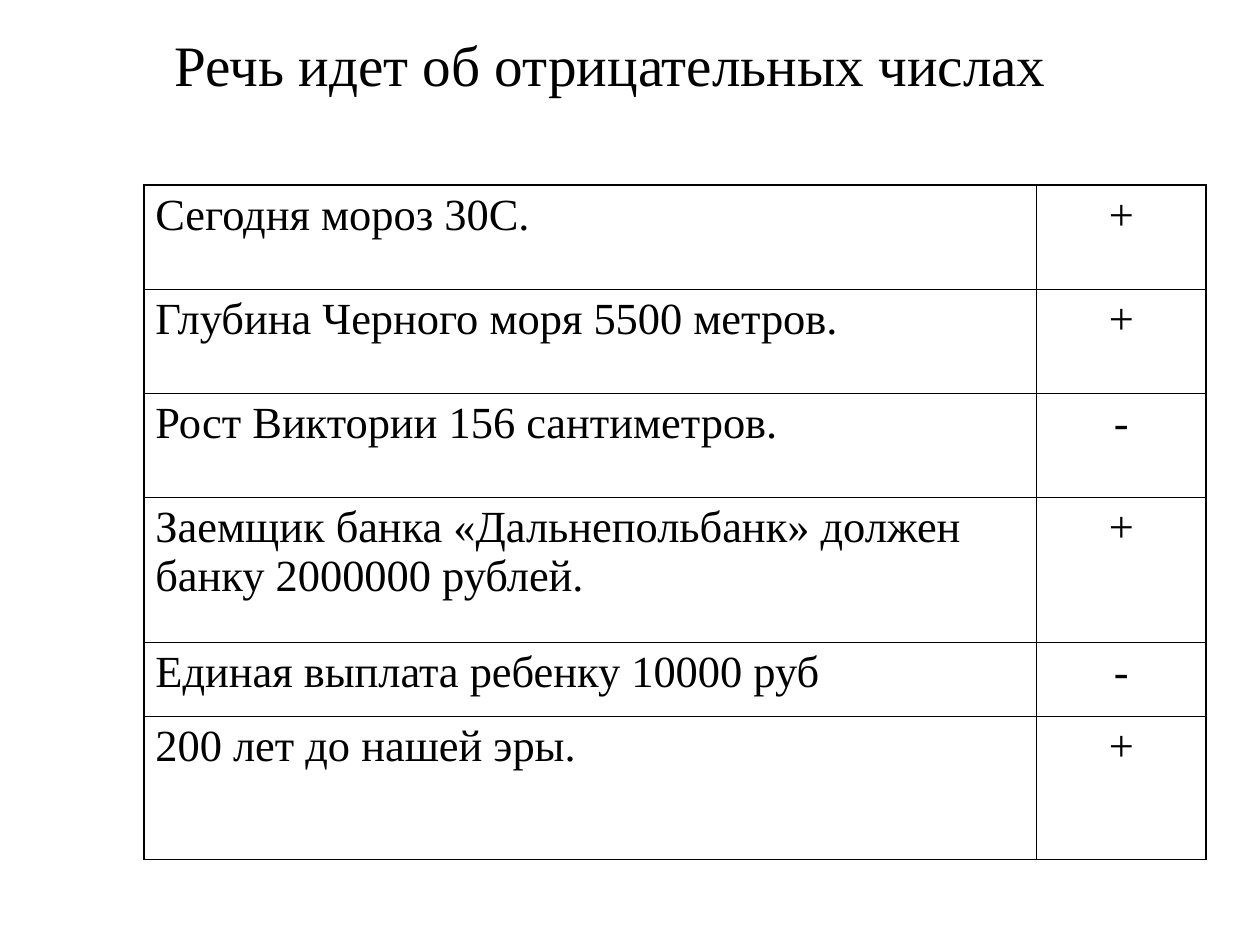
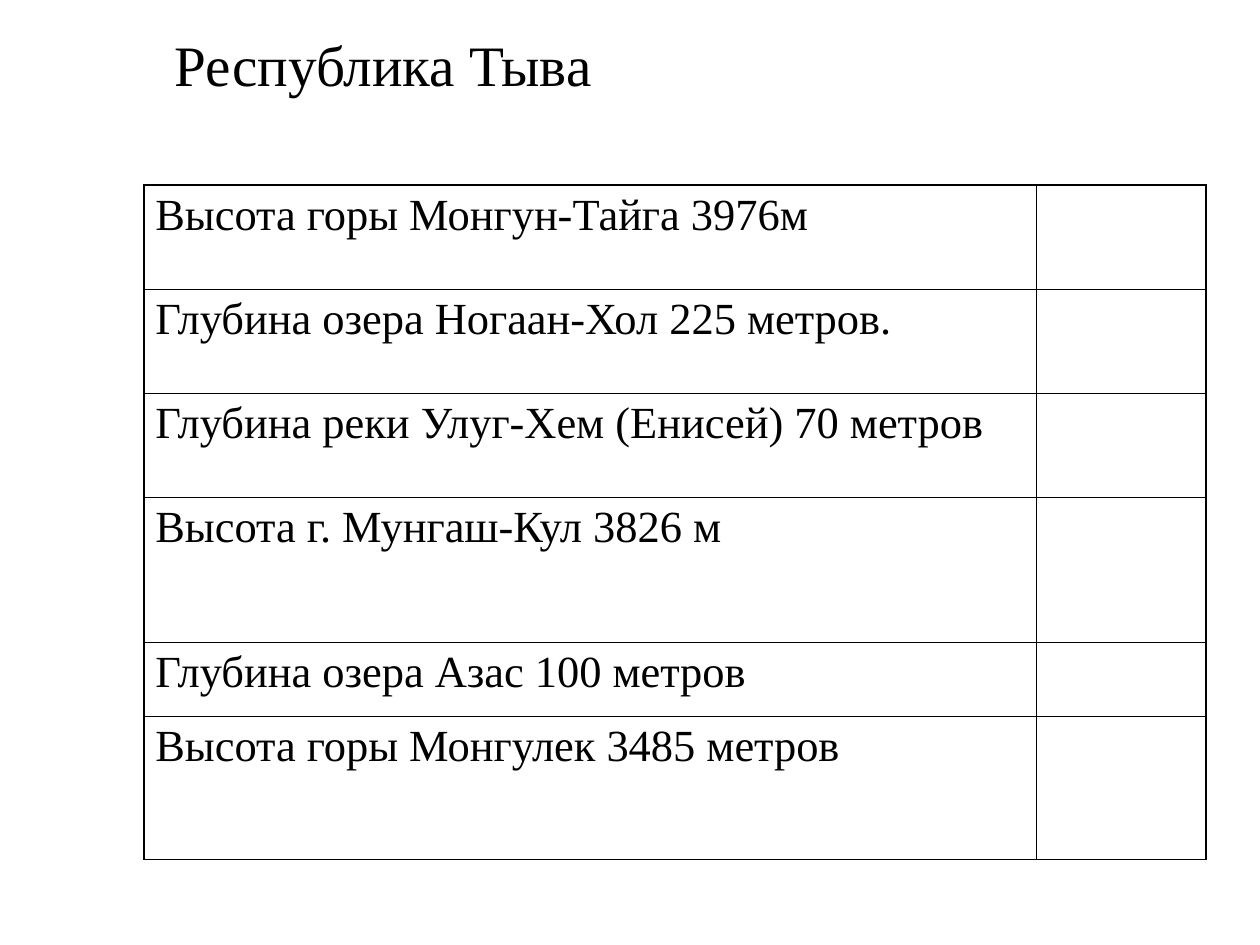
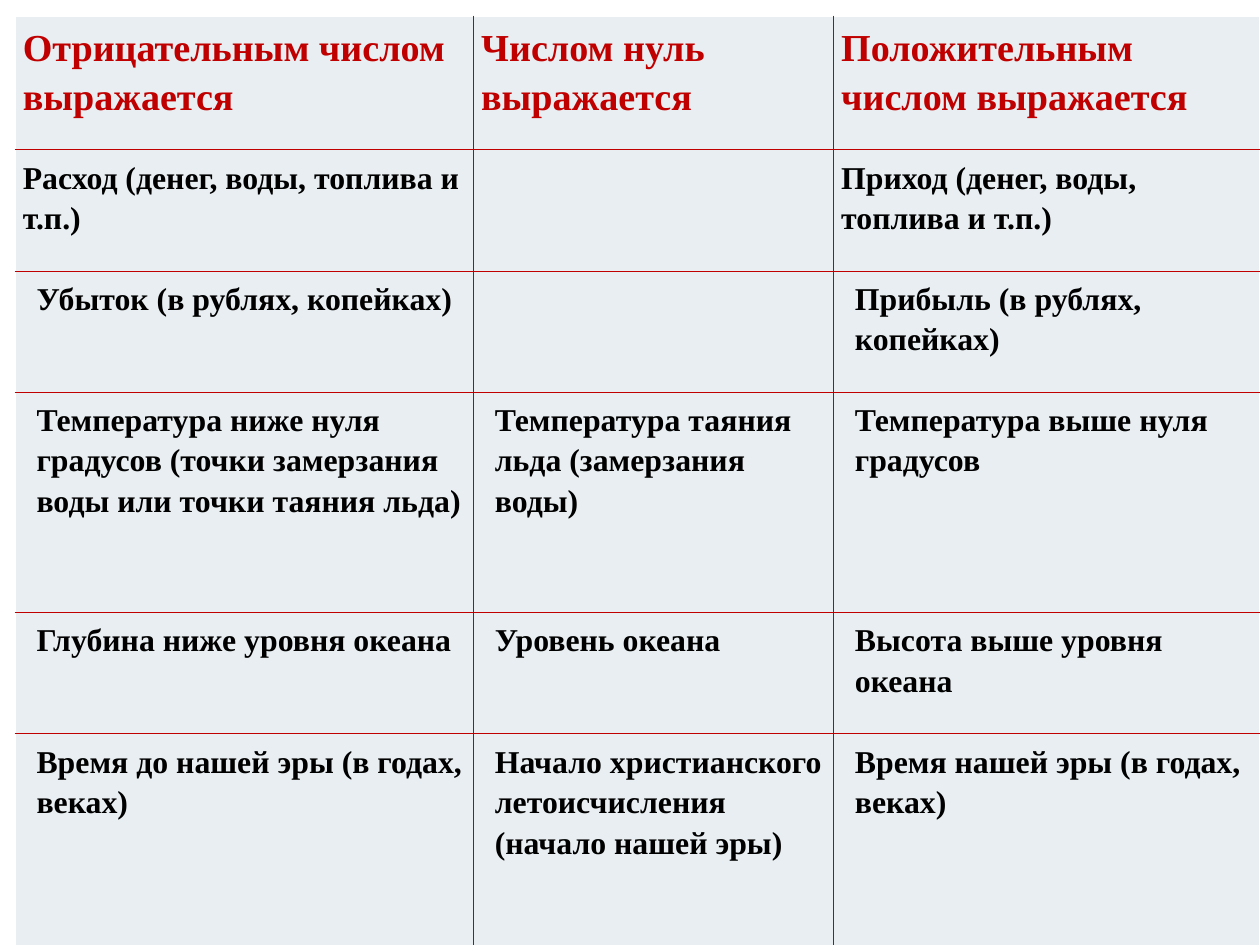
from lxml import etree
from pptx import Presentation
from pptx.dml.color import RGBColor
from pptx.enum.text import MSO_ANCHOR, PP_ALIGN
from pptx.oxml.ns import qn
from pptx.util import Inches, Pt

BOTTOM = MSO_ANCHOR.BOTTOM
CENTER, LEFT = PP_ALIGN.CENTER, PP_ALIGN.LEFT

# The page is 28 by 21 centimetres.
PAGE = (Inches(28 / 2.54), Inches(21 / 2.54))
FONT = "Times New Roman"
COLORS = {"ink": "000000", "red": "C00000", "pale": "E8EEF1", "white": "FFFFFF"}
THIN, THICK = 0.45, 1.08

QUIZZES = [
    ("Речь идет об отрицательных числах", [
        ("Сегодня мороз 30С.", "+"),
        ("Глубина Черного моря 5500 метров.", "+"),
        ("Рост Виктории 156 сантиметров.", "-"),
        ("Заемщик банка «Дальнепольбанк» должен банку 2000000 рублей.", "+"),
        ("Единая выплата ребенку 10000 руб", "-"),
        ("200 лет до нашей эры.", "+"),
    ]),
    ("Республика Тыва", [
        ("Высота горы Монгун-Тайга 3976м", ""),
        ("Глубина озера Ногаан-Хол 225 метров.", ""),
        ("Глубина реки Улуг-Хем (Енисей) 70 метров", ""),
        ("Высота г. Мунгаш-Кул 3826 м", ""),
        ("Глубина озера Азас 100 метров", ""),
        ("Высота горы Монгулек 3485 метров", ""),
    ]),
]
QUIZ_COLS = [7.81, 1.48]
QUIZ_ROWS = [0.91, 0.91, 0.91, 1.27, 0.65, 1.25]

SIGNS = [
    ("Отрицательным числом выражается", "Числом нуль выражается",
     "Положительным числом выражается"),
    ("Расход (денег, воды, топлива и т.п.)", "",
     "Приход (денег, воды, топлива и т.п.)"),
    ("Убыток (в рублях, копейках)", "", "Прибыль (в рублях, копейках)"),
    ("Температура ниже нуля градусов (точки замерзания воды или точки таяния льда)",
     "Температура таяния льда (замерзания воды)", "Температура выше нуля градусов"),
    ("Глубина ниже уровня океана", "Уровень океана", "Высота выше уровня океана"),
    ("Время до нашей эры (в годах, веках)",
     "Начало христианского летоисчисления (начало нашей эры)",
     "Время нашей эры (в годах, веках)"),
]
SIGN_COLS = [4.01, 3.15, 3.73]
SIGN_ROWS = [1.17, 1.06, 1.06, 1.93, 1.06, 1.94]


def style(para, size, color="ink", bold=False):
    for run in para.runs:
        run.font.name = FONT
        run.font.size = Pt(size)
        run.font.bold = bold
        run.font.color.rgb = RGBColor.from_string(COLORS[color])


def add_title(slide, text):
    box = slide.shapes.add_textbox(Inches(1.43), Inches(0.23), Inches(9.31), Inches(0.68))
    frame = box.text_frame
    frame.word_wrap = True
    frame.vertical_anchor = BOTTOM
    frame.text = text
    style(frame.paragraphs[0], 36)


def set_edge(cell, side, color, width):
    props = cell._tc.get_or_add_tcPr()
    line = etree.SubElement(props, qn("a:ln" + side), w=str(int(Pt(width))))
    fill = etree.SubElement(line, qn("a:solidFill"))
    etree.SubElement(fill, qn("a:srgbClr"), val=COLORS[color])


def add_grid(slide, left, top, cols, rows, data, inner, outer):
    """Add a ruled table; inner and outer are (color, width) of its lines."""
    frame = slide.shapes.add_table(len(rows), len(cols), Inches(left), Inches(top),
                                   Inches(sum(cols)), Inches(sum(rows)))
    table = frame.table
    table.first_row = table.horz_banding = False
    for col, width in zip(table.columns, cols):
        col.width = Inches(width)
    for row, height in zip(table.rows, rows):
        row.height = Inches(height)
    for r, texts in enumerate(data):
        for c, text in enumerate(texts):
            cell = table.cell(r, c)
            cell.text = text
            rim = {"L": c == 0, "R": c == len(cols) - 1,
                   "T": r == 0, "B": r == len(rows) - 1}
            for side, edge in rim.items():
                set_edge(cell, side, *(outer if edge else inner))
    return table


def add_quiz(slide, title, data):
    add_title(slide, title)
    table = add_grid(slide, 1.26, 1.62, QUIZ_COLS, QUIZ_ROWS, data,
                     ("ink", THIN), ("ink", THICK))
    for row in table.rows:
        for cell, align in zip(row.cells, (LEFT, CENTER)):
            cell.fill.background()
            para = cell.text_frame.paragraphs[0]
            para.alignment = align
            style(para, 28)


def add_signs(slide):
    table = add_grid(slide, 0.13, 0.14, SIGN_COLS, SIGN_ROWS, SIGNS,
                     ("red", THIN), ("white", THIN))
    for r, row in enumerate(table.rows):
        for cell in row.cells:
            cell.fill.solid()
            cell.fill.fore_color.rgb = RGBColor.from_string(COLORS["pale"])
            cell.margin_left = cell.margin_right = Inches(0.07)
            para = cell.text_frame.paragraphs[0]
            para.line_spacing = 1.15
            if r > 1:
                para._p.get_or_add_pPr().set("marL", str(Inches(0.12)))
            style(para, 20 if r else 24, "ink" if r else "red", bold=True)


def main():
    deck = Presentation()
    deck.slide_width, deck.slide_height = PAGE
    blank = deck.slide_layouts[6]
    for title, data in QUIZZES:
        add_quiz(deck.slides.add_slide(blank), title, data)
    add_signs(deck.slides.add_slide(blank))
    deck.save("out.pptx")


if __name__ == "__main__":
    main()
